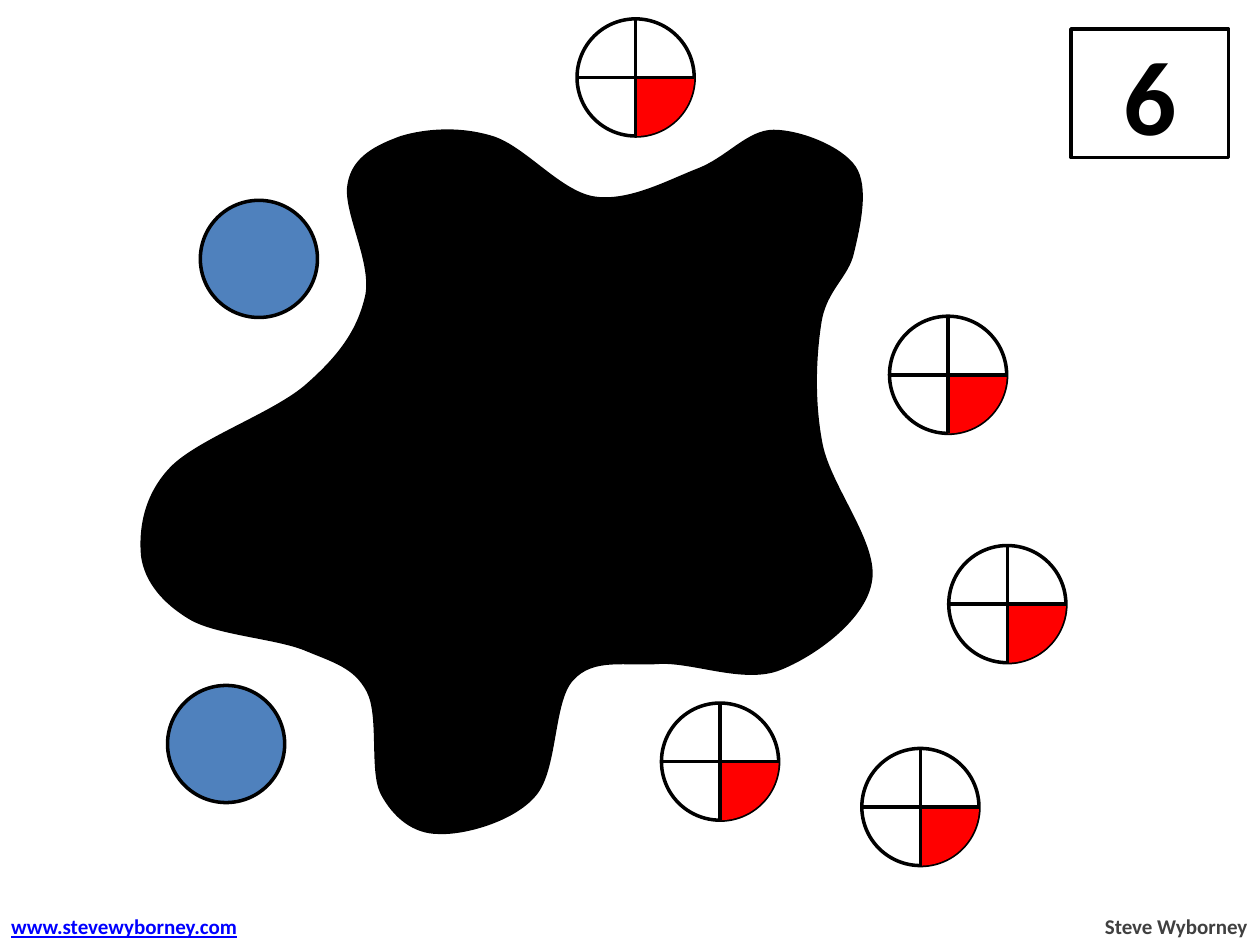
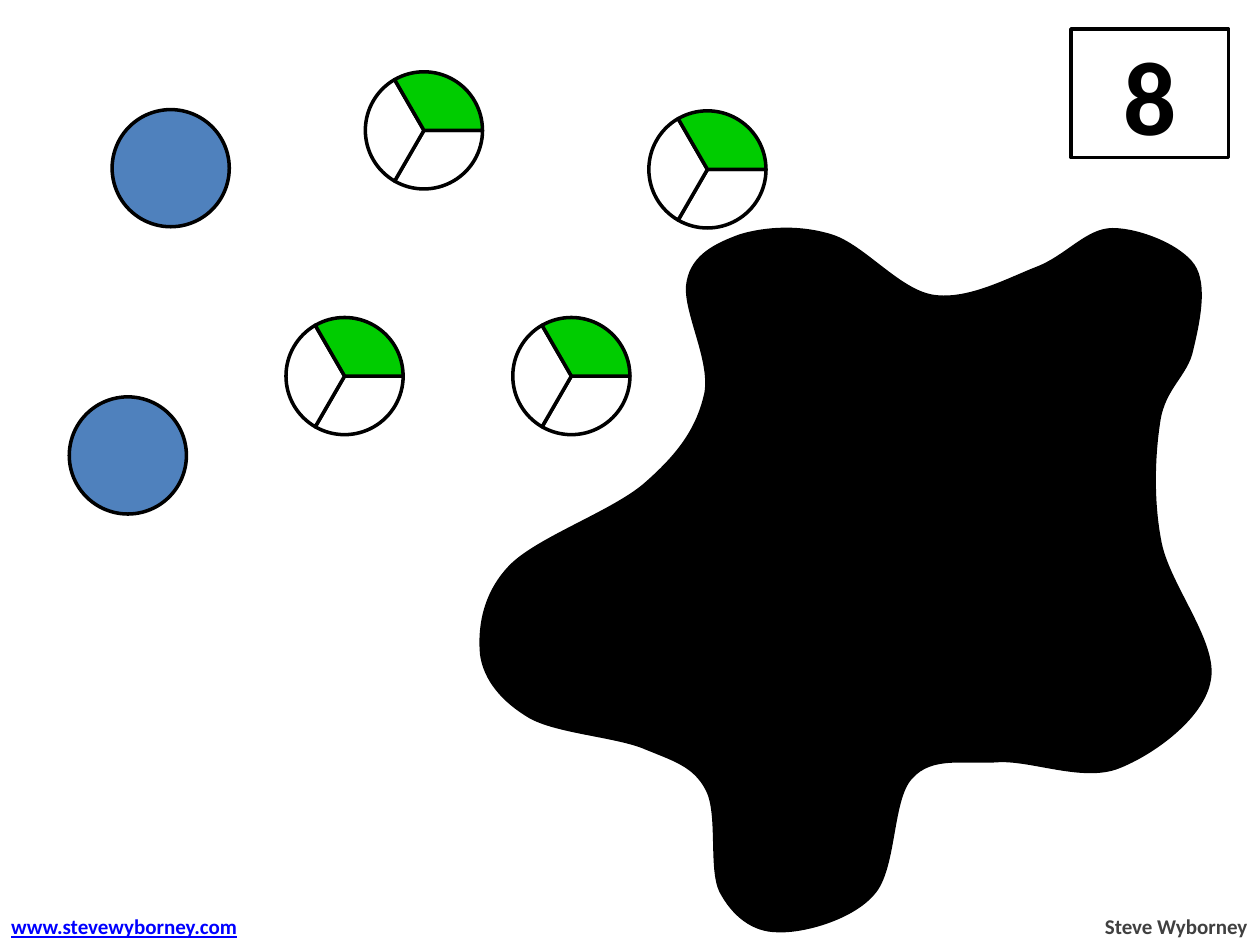
from dataclasses import dataclass
from itertools import chain

from lxml.etree import SubElement
from pptx import Presentation
from pptx.dml.color import RGBColor
from pptx.enum.shapes import MSO_CONNECTOR, MSO_SHAPE
from pptx.enum.text import MSO_ANCHOR, PP_ALIGN
from pptx.oxml.ns import qn
from pptx.util import Inches, Pt


@dataclass(frozen=True)
class Theme:
    font: str = "Calibri"
    black: str = "000000"
    white: str = "FFFFFF"
    whole: str = "4F81BD"
    quarter: str = "FF0000"
    third: str = "00CC00"
    link: str = "0000FF"
    credit: str = "404040"
    number_size: int = 60
    footer_size: int = 12
    line: float = 2


THEME = Theme()

# Content: left and top of every counter, and the shift of the splat
SLIDES = [
    {
        "number": "6",
        "wholes": [(1.59, 1.59), (1.33, 5.44)],
        "quarters": [(4.58, 0.15), (7.06, 2.51), (7.53, 4.33),
                     (5.25, 5.58), (6.84, 5.94)],
        "thirds": [],
        "splat_shift": (0, 0),
    },
    {
        "number": "8",
        "wholes": [(0.89, 0.87), (0.55, 3.15)],
        "quarters": [],
        "thirds": [(2.9, 0.57), (5.15, 0.88), (2.27, 2.52), (4.07, 2.52)],
        "splat_shift": (2.69, 0.78),
    },
]
SITE = "www.stevewyborney.com"
AUTHOR = "Steve Wyborney"

DIAMETER = 0.93
NUMBER_BOX = (8.5, 0.23, 1.25, 1.02)
SITE_BOX = (-0.01, 7.2, 2.05, 0.3)
AUTHOR_BOX = (8.5, 7.2, 1.5, 0.3)

# Splat outline: a start, then two handles and an end for each curve
SPLAT_START = (1.51, 4.92)
SPLAT_CURVES = [
    ((1.29, 4.79), (1.15, 4.62), (1.12, 4.42)),
    ((1.1, 4.22), (1.13, 3.94), (1.35, 3.71)),
    ((1.57, 3.48), (2.19, 3.27), (2.44, 3.04)),
    ((2.7, 2.81), (2.84, 2.61), (2.9, 2.34)),
    ((2.95, 2.07), (2.71, 1.66), (2.76, 1.45)),
    ((2.8, 1.24), (2.99, 1.15), (3.18, 1.08)),
    ((3.38, 1.02), (3.65, 1), (3.91, 1.08)),
    ((4.17, 1.16), (4.45, 1.52), (4.72, 1.56)),
    ((4.99, 1.6), (5.3, 1.43), (5.53, 1.34)),
    ((5.77, 1.25), (5.93, 1.03), (6.14, 1.03)),
    ((6.35, 1.03), (6.68, 1.16), (6.79, 1.32)),
    ((6.9, 1.48), (6.83, 1.79), (6.78, 2)),
    ((6.74, 2.2), (6.56, 2.3), (6.52, 2.56)),
    ((6.48, 2.81), (6.46, 3.18), (6.53, 3.53)),
    ((6.6, 3.87), (6.98, 4.32), (6.92, 4.62)),
    ((6.87, 4.92), (6.47, 5.21), (6.19, 5.32)),
    ((5.91, 5.43), (5.51, 5.26), (5.24, 5.27)),
    ((4.96, 5.29), (4.71, 5.22), (4.55, 5.4)),
    ((4.39, 5.57), (4.43, 6.12), (4.25, 6.32)),
    ((4.08, 6.52), (3.69, 6.63), (3.48, 6.62)),
    ((3.28, 6.62), (3.12, 6.49), (3.02, 6.3)),
    ((2.93, 6.12), (3.01, 5.68), (2.91, 5.49)),
    ((2.81, 5.3), (2.65, 5.26), (2.41, 5.16)),
    ((2.18, 5.07), (1.72, 5.04), (1.51, 4.92)),
]


# Basic parts
def rgb(color):
    return RGBColor.from_string(color)


def paint(sp, fill, outlined=True):
    sp.shadow.inherit = False
    sp.fill.solid()
    sp.fill.fore_color.rgb = rgb(fill)
    if outlined:
        sp.line.color.rgb = rgb(THEME.black)
        sp.line.width = Pt(THEME.line)
    else:
        sp.line.fill.background()


def add_preset(shapes, kind, box, fill, outlined=True):
    sp = shapes.add_shape(kind, *map(Inches, box))
    paint(sp, fill, outlined)
    return sp


def add_sector(shapes, box, start, end, fill, outlined=True):
    """Add a pie sector; angles are degrees clockwise from the right."""
    sp = add_preset(shapes, MSO_SHAPE.PIE, box, fill, outlined)
    for i, angle in enumerate((start, end)):
        sp.adjustments[i] = angle * 0.6


def add_line(shapes, x1, y1, x2, y2):
    line = shapes.add_connector(MSO_CONNECTOR.STRAIGHT,
                                *map(Inches, (x1, y1, x2, y2)))
    line.line.color.rgb = rgb(THEME.black)
    line.line.width = Pt(THEME.line)
    SubElement(line._element.spPr, qn("a:effectLst"))


def write(sp, text, *, size, color, align=PP_ALIGN.LEFT,
          anchor=MSO_ANCHOR.TOP, underline=False):
    tf = sp.text_frame
    tf.word_wrap = True
    tf.vertical_anchor = anchor
    p = tf.paragraphs[0]
    p.alignment = align
    r = p.add_run()
    r.text = text
    r.font.name = THEME.font
    r.font.size = Pt(size)
    r.font.bold = True
    r.font.underline = underline
    r.font.color.rgb = rgb(color)


# Counters
def add_whole(shapes, x, y):
    add_preset(shapes, MSO_SHAPE.OVAL, (x, y, DIAMETER, DIAMETER), THEME.whole)


def add_quarter(shapes, x, y):
    group = shapes.add_group_shape().shapes
    box = (x, y, DIAMETER, DIAMETER)
    mid_x, mid_y = x + DIAMETER / 2, y + DIAMETER / 2
    add_preset(group, MSO_SHAPE.OVAL, box, THEME.white)
    add_sector(group, box, 0, 90, THEME.quarter, outlined=False)
    add_line(group, mid_x, y, mid_x, y + DIAMETER)
    add_line(group, x, mid_y, x + DIAMETER, mid_y)


def add_third(shapes, x, y):
    group = shapes.add_group_shape().shapes
    for i, fill in enumerate((THEME.white, THEME.white, THEME.third)):
        add_sector(group, (x, y, DIAMETER, DIAMETER),
                   120 * i, 120 * (i + 1), fill)


# Splat: a polygon through all points, with each three lines made one curve
def add_splat(shapes, dx, dy):
    points = [(Inches(x + dx), Inches(y + dy))
              for x, y in chain([SPLAT_START], *SPLAT_CURVES)]
    builder = shapes.build_freeform(*points[0])
    builder.add_line_segments(points[1:], close=True)
    sp = builder.convert_to_shape()
    paint(sp, THEME.black, outlined=False)
    lines = list(sp._element.iter(qn("a:lnTo")))
    outline = lines[0].getparent()
    close = outline.find(qn("a:close"))
    for i in range(0, len(SPLAT_CURVES) * 3, 3):
        curve = SubElement(outline, qn("a:cubicBezTo"))
        for line in lines[i:i + 3]:
            curve.append(line[0])
    for line in lines:
        outline.remove(line)
    outline.append(close)


# Parts shared by the slides
def add_frame(shapes, number):
    box = add_preset(shapes, MSO_SHAPE.RECTANGLE, NUMBER_BOX, THEME.white)
    write(box, number, size=THEME.number_size, color=THEME.black,
          align=PP_ALIGN.CENTER, anchor=MSO_ANCHOR.MIDDLE)
    write(shapes.add_textbox(*map(Inches, AUTHOR_BOX)), AUTHOR,
          size=THEME.footer_size, color=THEME.credit, align=PP_ALIGN.RIGHT)
    write(shapes.add_textbox(*map(Inches, SITE_BOX)), SITE,
          size=THEME.footer_size, color=THEME.link, underline=True)


def main():
    prs = Presentation()
    prs.slide_width, prs.slide_height = Inches(10), Inches(7.5)
    counters = {"wholes": add_whole, "quarters": add_quarter,
                "thirds": add_third}
    for content in SLIDES:
        s = prs.slides.add_slide(prs.slide_layouts[6])
        add_frame(s.shapes, content["number"])
        for kind, add_counter in counters.items():
            for x, y in content[kind]:
                add_counter(s.shapes, x, y)
        add_splat(s.shapes, *content["splat_shift"])
    prs.save("out.pptx")


if __name__ == "__main__":
    main()
